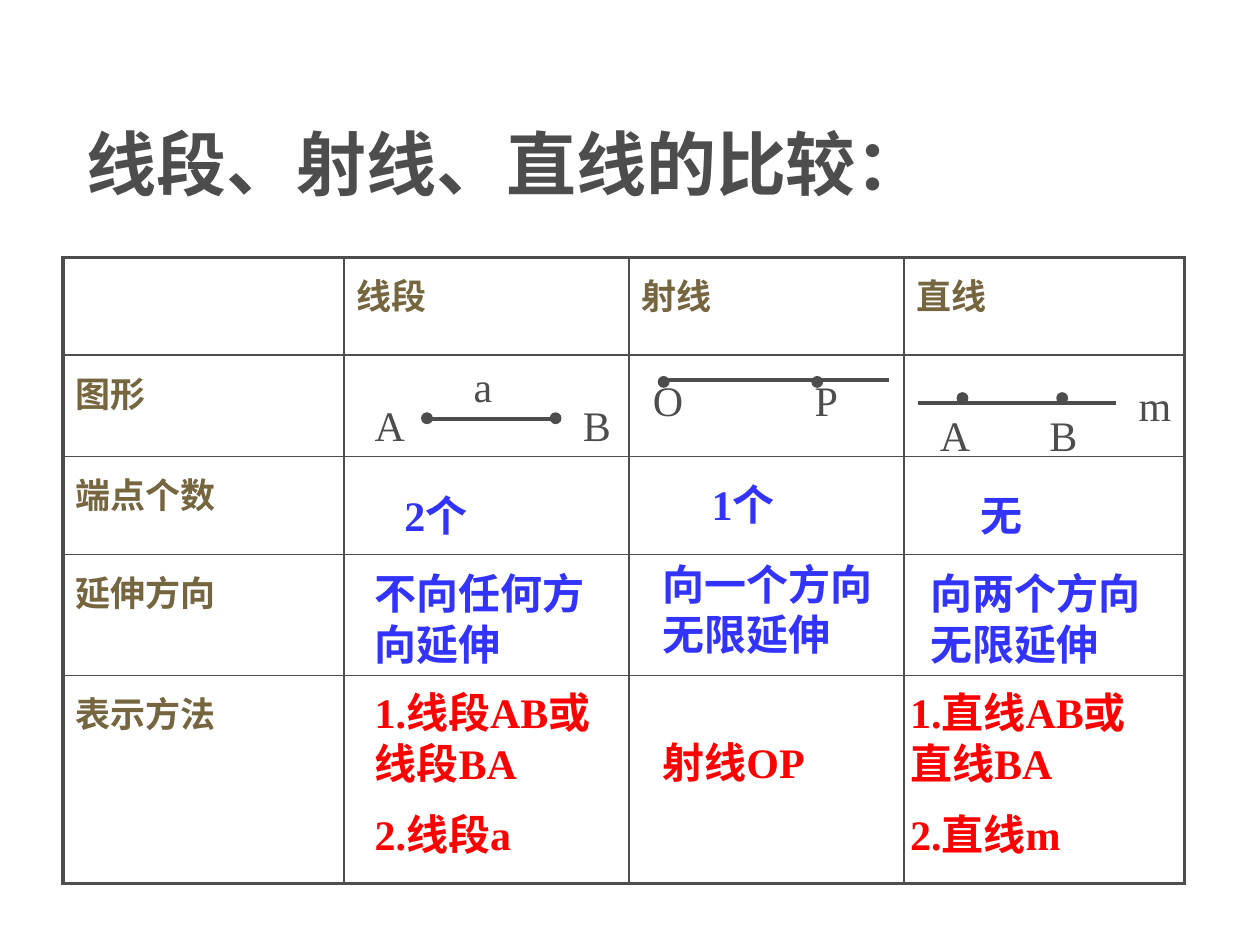
from lxml.etree import SubElement
from pptx import Presentation
from pptx.dml.color import RGBColor
from pptx.enum.shapes import MSO_CONNECTOR, MSO_SHAPE
from pptx.enum.text import MSO_AUTO_SIZE, PP_ALIGN
from pptx.oxml.ns import qn
from pptx.util import Pt

GREY = RGBColor(0x4D, 0x4D, 0x4D)
BROWN = RGBColor(0x76, 0x66, 0x40)
BLUE = RGBColor(0x33, 0x33, 0xFF)
RED = RGBColor(0xFF, 0x00, 0x00)
SERIF = "Times New Roman"
CHINESE = "Noto Sans CJK SC"

THIN, THICK = 1, 2.25
COLUMN_WIDTHS = (160.5, 163, 157, 160.5)
ROW_HEIGHTS = (56, 58, 56, 69, 119)
COLUMN_HEADS = ("线段", "射线", "直线")
ROW_HEADS = ("图形", "端点个数", "延伸方向", "表示方法")


def write_span(para, text, size=24, color=GREY, bold=False, font=SERIF):
    span = para.add_run()
    span.text = text
    span.font.size = Pt(size)
    span.font.bold = bold
    span.font.color.rgb = color
    span.font.name = font
    east_asian = SubElement(span.font._element, qn("a:ea"))
    east_asian.set("typeface", CHINESE)


def add_text(shapes, text, left, top, width, height=36, **style):
    box = shapes.add_textbox(Pt(left), Pt(top), Pt(width), Pt(height))
    frame = box.text_frame
    frame.word_wrap = True
    frame.auto_size = MSO_AUTO_SIZE.SHAPE_TO_FIT_TEXT
    for index, line in enumerate(text.split("\n")):
        para = frame.add_paragraph() if index else frame.paragraphs[0]
        if index:
            para.space_before = Pt(12)
        write_span(para, line, **style)


def add_line(shapes, start, end, y, weight=2.25):
    line = shapes.add_connector(MSO_CONNECTOR.STRAIGHT, Pt(start), Pt(y), Pt(end), Pt(y))
    line.line.color.rgb = GREY
    line.line.width = Pt(weight)
    SubElement(line._element.spPr, qn("a:effectLst"))


def add_dot(shapes, left, top):
    dot = shapes.add_shape(MSO_SHAPE.OVAL, Pt(left), Pt(top), Pt(6), Pt(6))
    dot.shadow.inherit = False
    dot.fill.solid()
    dot.fill.fore_color.rgb = GREY
    dot.line.color.rgb = GREY
    dot.line.width = Pt(0.75)


def add_figure(page, line, dots, labels):
    shapes = page.shapes.add_group_shape().shapes
    add_line(shapes, *line)
    for dot in dots:
        add_dot(shapes, *dot)
    for label in labels:
        add_text(shapes, *label)


def set_border(cell, side, weight):
    border = SubElement(cell._tc.get_or_add_tcPr(), qn(f"a:ln{side}"), w=str(Pt(weight)))
    fill = SubElement(border, qn("a:solidFill"))
    SubElement(fill, qn("a:srgbClr"), val=str(GREY))


def write_heading(cell, text):
    para = cell.text_frame.paragraphs[0]
    para.alignment = PP_ALIGN.JUSTIFY
    para.line_spacing = 1.1
    write_span(para, text, size=20, color=BROWN, bold=True, font=CHINESE)


def add_comparison_table(page):
    rows, columns = len(ROW_HEIGHTS), len(COLUMN_WIDTHS)
    table = page.shapes.add_table(rows, columns, Pt(36), Pt(147),
                                  Pt(sum(COLUMN_WIDTHS)), Pt(sum(ROW_HEIGHTS))).table
    table.first_row = False
    table.horz_banding = False
    for column, width in zip(table.columns, COLUMN_WIDTHS):
        column.width = Pt(width)
    for row, height in zip(table.rows, ROW_HEIGHTS):
        row.height = Pt(height)
    for r in range(rows):
        for c in range(columns):
            cell = table.cell(r, c)
            outer = {"L": c == 0, "R": c == columns - 1, "T": r == 0, "B": r == rows - 1}
            for side, is_outer in outer.items():
                set_border(cell, side, THICK if is_outer else THIN)
            cell.fill.background()
    for c, head in enumerate(COLUMN_HEADS, 1):
        write_heading(table.cell(0, c), head)
    for r, head in enumerate(ROW_HEADS, 1):
        write_heading(table.cell(r, 0), head)


def add_answers(page):
    answers = (
        ("2个", 224, 276, 114, 36, BLUE),
        ("1个", 399.5, 270, 63, 36, BLUE),
        ("无", 553, 276, 57, 36, BLUE),
        ("不向任何方向延伸", 207, 321, 142, 65, BLUE),
        ("向一个方向无限延伸", 371.5, 315.5, 153, 65, BLUE),
        ("向两个方向无限延伸", 524.5, 321, 136, 65, BLUE),
        ("1.线段AB或线段BA\n2.线段a", 207, 389, 153, 108, RED),
        ("射线OP", 371.5, 417.5, 130, 36, RED),
        ("1.直线AB或直线BA\n2.直线m", 513, 389, 153, 108, RED),
    )
    for text, left, top, width, height, color in answers:
        add_text(page.shapes, text, left, top, width, height, color=color, bold=True)


def main():
    deck = Presentation()
    deck.slide_width, deck.slide_height = Pt(720), Pt(540)
    page = deck.slides.add_slide(deck.slide_layouts[6])
    add_text(page.shapes, "线段、射线、直线的比较：", 42.5, 65.5, 590, 55.5,
             size=40, bold=True, font="Arial")
    add_comparison_table(page)
    add_figure(page, (379, 508, 217.25), ((376.25, 215.25), (464, 215.25)),
               (("O", 366, 210.5, 33), ("P", 458.5, 210.5, 27.5)))
    add_figure(page, (243, 316.5, 239.5, 2.5), ((241, 236), (314.5, 236)),
               (("a", 263.5, 202.5, 34), ("A", 207, 225, 39.5), ("B", 326, 225, 28)))
    add_figure(page, (524.5, 638, 230.25), ((547, 224.5), (604, 224.5)),
               (("A", 530, 230.5, 39.5), ("B", 592.5, 230.5, 39.5), ("m", 643.5, 213.5, 34)))
    add_answers(page)
    deck.save("out.pptx")


if __name__ == "__main__":
    main()
